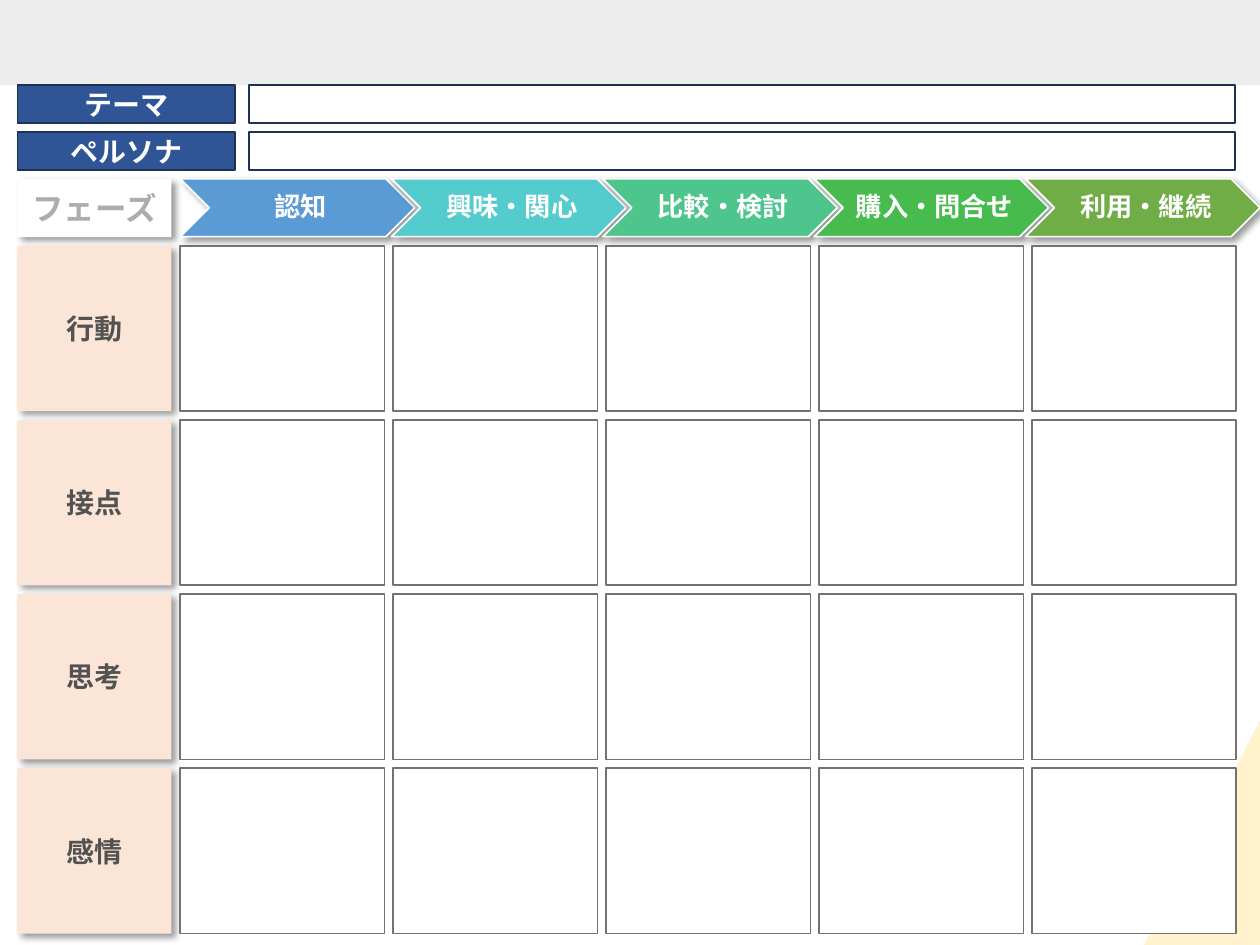
from dataclasses import dataclass

from lxml import etree
from pptx import Presentation
from pptx.dml.color import RGBColor
from pptx.enum.shapes import MSO_SHAPE
from pptx.enum.text import MSO_ANCHOR, PP_ALIGN
from pptx.oxml.ns import qn
from pptx.util import Pt

RECTANGLE = MSO_SHAPE.RECTANGLE
CHEVRON = MSO_SHAPE.CHEVRON
RIGHT_TRIANGLE = MSO_SHAPE.RIGHT_TRIANGLE
MIDDLE = MSO_ANCHOR.MIDDLE
CENTER = PP_ALIGN.CENTER


@dataclass(frozen=True)
class Theme:
    font: str = "Calibri"
    white: str = "FFFFFF"
    band: str = "EDEDED"
    corner: str = "FFF2CC"
    navy: str = "2F5597"
    navy_line: str = "1E3256"
    phase_text: str = "AFABAB"
    row_fill: str = "FBE5D6"
    row_text: str = "525252"
    cell_line: str = "767171"
    shadow: str = "000000"
    chevron_size: float = 15
    label_size: float = 16
    phase_size: float = 18


THEME = Theme()
PHASES = [
    ("認知", "5B9BD5"),
    ("興味・関心", "54CCCD"),
    ("比較・検討", "4DC58D"),
    ("購入・問合せ", "48BB4F"),
    ("利用・継続", "70AD47"),
]
ROWS = ["行動", "接点", "思考", "感情"]
FIELDS = ["テーマ", "ペルソナ"]


def color(value):
    return RGBColor.from_string(value)


def add_shadow(shape):
    """Add a soft shadow toward the lower right."""
    shape.shadow.inherit = False
    effects = shape.element.spPr.find(qn("a:effectLst"))
    outer = etree.SubElement(effects, qn("a:outerShdw"))
    settings = {"blurRad": Pt(4), "dist": Pt(3), "dir": 45 * 60000,
                "algn": "tl", "rotWithShape": 0}
    for name, value in settings.items():
        outer.set(name, str(int(value)) if name != "algn" else value)
    shade = etree.SubElement(outer, qn("a:srgbClr"), val=THEME.shadow)
    etree.SubElement(shade, qn("a:alpha"), val="40000")


def add_box(shapes, kind, box, fill, line=None, shadow=False):
    shape = shapes.add_shape(kind, *map(Pt, box))
    shape.fill.solid()
    shape.fill.fore_color.rgb = color(fill)
    if line:
        shape.line.color.rgb = color(line)
        shape.line.width = Pt(1)
    else:
        shape.line.fill.background()
    if shadow:
        add_shadow(shape)
    else:
        shape.shadow.inherit = False
    return shape


def write_label(shape, text, size, text_color, line_spacing=None):
    frame = shape.text_frame
    frame.word_wrap = True
    frame.vertical_anchor = MIDDLE
    paragraph = frame.paragraphs[0]
    paragraph.alignment = CENTER
    paragraph.line_spacing = line_spacing
    run = paragraph.add_run()
    run.text = text
    for name, value in {"name": THEME.font, "size": Pt(size), "bold": True}.items():
        setattr(run.font, name, value)
    run.font.color.rgb = color(text_color)


def add_backdrop(slide, box):
    left, top, width, height = box
    add_box(slide.shapes, RECTANGLE, (left, top, width, 48.75), THEME.band)
    corner_width, corner_height = 66.25, 128.25
    corner = add_box(slide.shapes, RIGHT_TRIANGLE,
                     (left + width - corner_width, top + height - corner_height,
                      corner_width, corner_height), THEME.corner)
    corner.element.spPr.find(qn("a:xfrm")).set("flipH", "1")


def add_phases(slide, box):
    """Spread overlapping chevrons evenly over the box."""
    left, top, width, height = box
    chevron_width, inset = 134, 16.75
    pitch = (width - chevron_width) / (len(PHASES) - 1)
    group = slide.shapes.add_group_shape()
    for index, (name, fill) in enumerate(PHASES):
        x = left + index * pitch
        add_box(group.shapes, CHEVRON, (x, top, chevron_width, height),
                fill, THEME.white, shadow=True)
        label = group.shapes.add_textbox(
            *map(Pt, (x + inset, top, chevron_width - 2 * inset, height)))
        margins = {"margin_left": 5, "margin_right": 1.5,
                   "margin_top": 1.5, "margin_bottom": 1.5}
        for side, value in margins.items():
            setattr(label.text_frame, side, Pt(value))
        write_label(label, name, THEME.chevron_size, THEME.white, 0.9)


def add_fields(slide, box):
    """Stack a labelled empty field for each heading."""
    left, top, width, height = box
    label_width, gap, row_gap = 124.5, 7.75, 5
    row_height = (height - row_gap * (len(FIELDS) - 1)) / len(FIELDS)
    entry_left = left + label_width + gap
    for index, name in enumerate(FIELDS):
        y = top + index * (row_height + row_gap)
        label = add_box(slide.shapes, RECTANGLE, (left, y, label_width, row_height),
                        THEME.navy, THEME.navy_line)
        write_label(label, name, THEME.label_size, THEME.white)
        add_box(slide.shapes, RECTANGLE,
                (entry_left, y, left + width - entry_left, row_height),
                THEME.white, THEME.navy_line)


def add_row_labels(slide, box, pitch, row_height):
    left, top, width, header_height = box
    header = add_box(slide.shapes, RECTANGLE, (left, top, width, header_height),
                     THEME.white, shadow=True)
    write_label(header, "フェーズ", THEME.phase_size, THEME.phase_text)
    first_row = top + header_height + pitch - row_height
    for index, name in enumerate(ROWS):
        label = add_box(slide.shapes, RECTANGLE,
                        (left, first_row + index * pitch, width, row_height),
                        THEME.row_fill, shadow=True)
        write_label(label, name, THEME.label_size, THEME.row_text)


def add_cells(slide, box, row_pitch, row_height):
    left, top, width = box
    gap = 5
    cell_width = (width - gap * (len(PHASES) - 1)) / len(PHASES)
    for row in range(len(ROWS)):
        for column in range(len(PHASES)):
            add_box(slide.shapes, RECTANGLE,
                    (left + column * (cell_width + gap), top + row * row_pitch,
                     cell_width, row_height), THEME.white, THEME.cell_line)


def main():
    presentation = Presentation()
    presentation.slide_width, presentation.slide_height = Pt(720), Pt(540)
    slide = presentation.slides.add_slide(presentation.slide_layouts[6])
    row_pitch, row_height = 99.5, 94.5
    add_backdrop(slide, (0, 0, 720, 540))
    add_phases(slide, (103, 102.25, 617, 33))
    add_fields(slide, (10, 48.75, 695.75, 48.25))
    add_row_labels(slide, (10, 102.25, 88, 33.25), row_pitch, row_height)
    add_cells(slide, (103, 140.5, 603.5), row_pitch, row_height)
    presentation.save("out.pptx")


if __name__ == "__main__":
    main()
